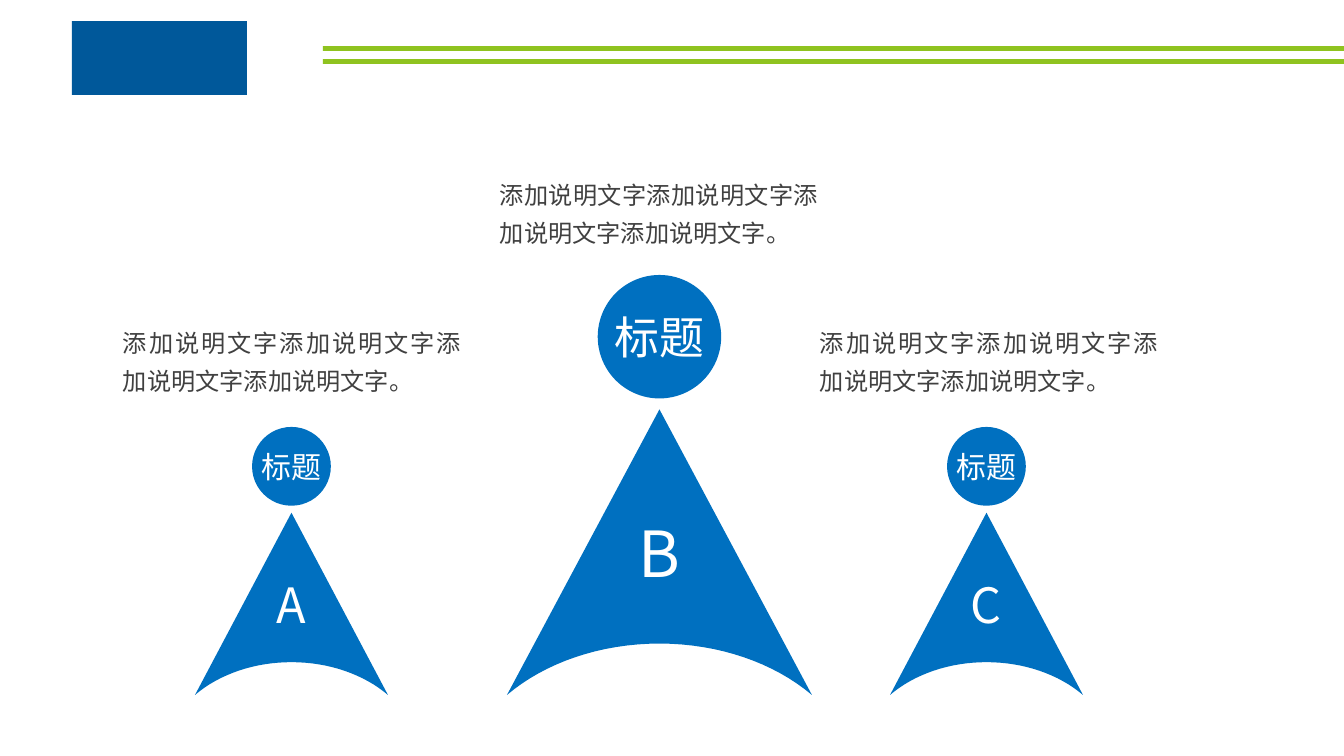
import pptx
import pptx.dml.color
import pptx.enum.shapes
import pptx.enum.text
import pptx.oxml.ns
import pptx.util
from lxml import etree

PX = 914400 / 121
FONT = "Noto Sans CJK SC"
BLUE = pptx.dml.color.RGBColor(0x00, 0x70, 0xC0)
NAVY = pptx.dml.color.RGBColor(0x00, 0x58, 0x9A)
GREEN = pptx.dml.color.RGBColor(0x8F, 0xC3, 0x1F)
GREY = pptx.dml.color.RGBColor(0x40, 0x40, 0x40)
WHITE = pptx.dml.color.RGBColor(0xFF, 0xFF, 0xFF)
SHAPE = pptx.enum.shapes.MSO_SHAPE
ALIGN = pptx.enum.text.PP_ALIGN
CAPTION = "添加说明文字添加说明文字添加说明文字添加说明文字。"
HEAD_PART = 0.294
CLOAK_PART = 0.68
HEM = ((1, 1), (0.875, 0.887), (0.694, 0.82), (0.5, 0.82))
HEM_STEPS = 16


def px(n):
    return pptx.util.Emu(round(n * PX))


def paint(sp, color):
    sp.shadow.inherit = False
    sp.fill.solid()
    sp.fill.fore_color.rgb = color
    sp.line.fill.background()


def add_shape(s, kind, box, color):
    sp = s.shapes.add_shape(kind, *map(px, box))
    paint(sp, color)
    return sp


def write(sp, text, size, color, align=ALIGN.CENTER, wrap=True, spacing=None):
    tf = sp.text_frame
    tf.word_wrap = wrap
    tf.vertical_anchor = pptx.enum.text.MSO_ANCHOR.MIDDLE
    p = tf.paragraphs[0]
    p.alignment = align
    p.line_spacing = spacing
    r = p.add_run()
    r.text = text
    r.font.size = pptx.util.Pt(size)
    r.font.name = FONT
    r.font.color.rgb = color
    ea = etree.SubElement(r._r.get_or_add_rPr(), pptx.oxml.ns.qn("a:ea"))
    ea.set("typeface", FONT)


def hem_point(t):
    weights = ((1 - t) ** 3, 3 * t * (1 - t) ** 2, 3 * t ** 2 * (1 - t), t ** 3)
    return tuple(sum(w * pt[i] for w, pt in zip(weights, HEM)) for i in (0, 1))


def add_cloak(s, box):
    left, top, width, height = box
    right_half = [hem_point(i / HEM_STEPS) for i in range(HEM_STEPS + 1)]
    left_half = [(1 - x, y) for x, y in reversed(right_half[:-1])]
    points = [(px(left + x * width), px(top + y * height))
              for x, y in right_half + left_half]
    fb = s.shapes.build_freeform(px(left + width / 2), px(top))
    fb.add_line_segments(points, close=True)
    sp = fb.convert_to_shape()
    paint(sp, BLUE)
    return sp


def add_header(s, box):
    left, top, width, height = box
    add_shape(s, SHAPE.RECTANGLE, (left, top, 175, height), NAVY)
    for bar_top in (top + 25, top + 38):
        add_shape(s, SHAPE.RECTANGLE, (left + 251, bar_top, width - 251, 5), GREEN)


def add_figure(s, box, letter, letter_size, title_size):
    left, top, width, height = box
    head = height * HEAD_PART
    cloak = height * CLOAK_PART
    sp = add_cloak(s, (left, top + height - cloak, width, cloak))
    write(sp, letter, letter_size, WHITE)
    sp = add_shape(s, SHAPE.OVAL, (left + (width - head) / 2, top, head, head), BLUE)
    tf = sp.text_frame
    tf.margin_left = tf.margin_right = tf.margin_top = tf.margin_bottom = 0
    write(sp, "标题", title_size, WHITE, wrap=False)


def add_caption(s, box):
    sp = s.shapes.add_textbox(*map(px, box))
    write(sp, CAPTION, 14.4, GREY, align=ALIGN.JUSTIFY, spacing=1.3)


def main():
    prs = pptx.Presentation()
    prs.slide_width, prs.slide_height = px(1344), px(756)
    s = prs.slides.add_slide(prs.slide_layouts[6])
    add_header(s, (72, 21, 1272, 74))
    small, large = (28.9, 17.8), (37.8, 26.7)
    figures = (
        ("A", (195, 427, 193, 268), small, (111, 294, 362, 127)),
        ("B", (507, 275, 305, 420), large, (488, 146, 342, 127)),
        ("C", (890, 427, 193, 268), small, (808, 294, 362, 127)),
    )
    for letter, box, sizes, caption_box in figures:
        add_figure(s, box, letter, *sizes)
        add_caption(s, caption_box)
    prs.save("out.pptx")


if __name__ == "__main__":
    main()
